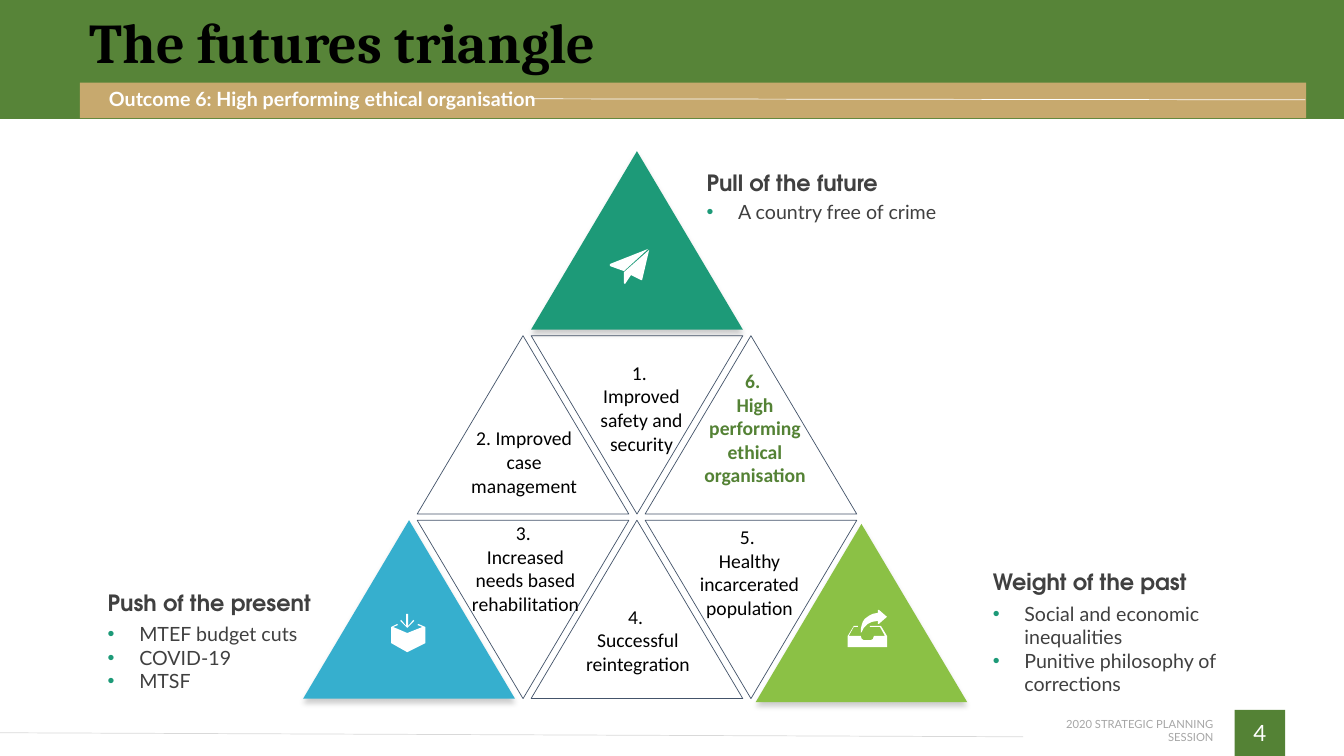
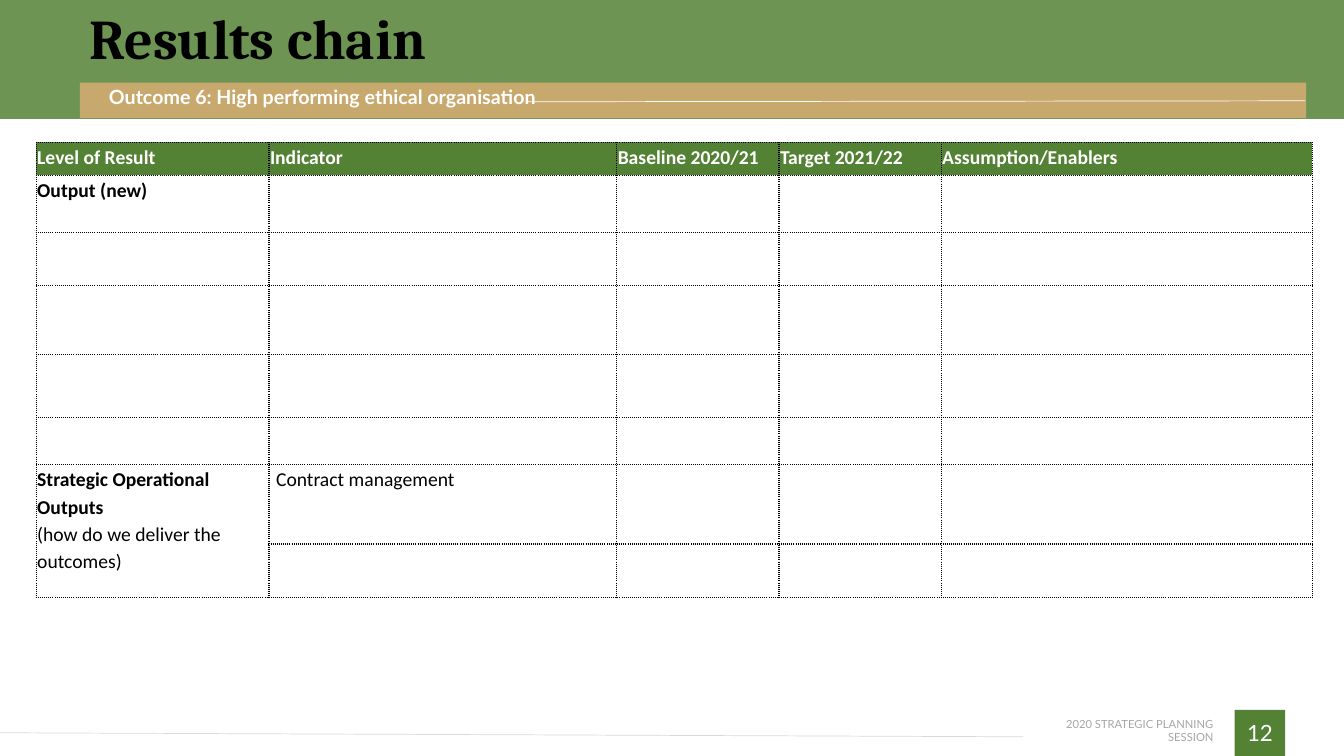
from lxml.etree import SubElement
from pptx import Presentation
from pptx.dml.color import RGBColor
from pptx.enum.shapes import MSO_CONNECTOR, MSO_SHAPE
from pptx.enum.text import MSO_ANCHOR, PP_ALIGN
from pptx.oxml.ns import qn
from pptx.util import Pt

COLORS = {
    "green": "548235", "tan": "C7A96E", "white": "FFFFFF", "black": "000000",
    "body": "404040", "footer": "A6A6A6", "rule": "D9D9D9", "outline": "44546A",
    "teal": "1D9A78", "blue": "36AFCE", "lime": "8BC145",
}
OUTCOME = "Outcome 6: High performing ethical organisation"
FOOTER = "2020 STRATEGIC PLANNING SESSION"


def rgb(name):
    return RGBColor.from_string(COLORS[name])


def add_xml(parent, tag, **attributes):
    return SubElement(parent, qn(tag), {k: str(v) for k, v in attributes.items()})


class Deck:
    """Holds the shared style and the slide being built."""

    def __init__(self):
        self.prs = Presentation()
        self.prs.slide_width, self.prs.slide_height = Pt(960), Pt(540)
        self.shapes = None

    def new_slide(self, number, title, title_box, band_opacity, outcome_top, rule):
        self.shapes = self.prs.slides.add_slide(self.prs.slide_layouts[6]).shapes
        # Footer
        page = self.shape((882, 507, 36, 33), "green")
        page.text_frame.vertical_anchor = MSO_ANCHOR.MIDDLE
        self.add_lines(page.text_frame, [number], 16, "Lato", "white", align=PP_ALIGN.CENTER)
        self.text((730.8, 517, 136.1, 9.4), [FOOTER], 8, "Lato", "footer",
                  align=PP_ALIGN.RIGHT, inset=0, anchor=MSO_ANCHOR.MIDDLE)
        self.line((730.8, 526.3), (0, 523.4), "rule")
        # Header
        self.shape((0, 0, 960, 85), "green", opacity=band_opacity)
        self.shape((57, 59, 876, 25.4), "tan")
        self.text((77.8, outcome_top, 500, 17.3), [OUTCOME], 14, "Lato", "white",
                  bold=True, inset=0, anchor=MSO_ANCHOR.MIDDLE)
        self.line(*rule, "white")
        self.text(title_box, [title], 40, "Cambria", "black", bold=True,
                  anchor=MSO_ANCHOR.MIDDLE, spacing=0.9)

    def add_lines(self, frame, lines, size, font, color, bold=False,
                  align=PP_ALIGN.LEFT, spacing=None, bulleted=False):
        for index, line in enumerate(lines):
            paragraph = frame.paragraphs[0] if index == 0 else frame.add_paragraph()
            paragraph.alignment = align
            if spacing:
                paragraph.line_spacing = spacing
            if bulleted:
                props = paragraph._p.get_or_add_pPr()
                props.set("marL", str(Pt(22.5)))
                props.set("indent", str(-Pt(22.5)))
                add_xml(add_xml(props, "a:buClr"), "a:srgbClr", val=COLORS["teal"])
                add_xml(props, "a:buFont", typeface="Arial")
                add_xml(props, "a:buChar", char="•")
            run = paragraph.add_run()
            run.text = line
            run.font.size, run.font.name, run.font.bold = Pt(size), font, bold
            run.font.color.rgb = rgb(color)

    def text(self, box, lines, size, font, color, inset=None,
             anchor=MSO_ANCHOR.TOP, **style):
        frame = self.shapes.add_textbox(*map(Pt, box)).text_frame
        frame.word_wrap = True
        frame.vertical_anchor = anchor
        if inset is not None:
            frame.margin_left = frame.margin_right = Pt(inset)
            frame.margin_top = frame.margin_bottom = Pt(inset)
        self.add_lines(frame, lines, size, font, color, **style)

    def paint(self, shape, fill=None, outline=None):
        shape.shadow.inherit = False
        if fill:
            shape.fill.solid()
            shape.fill.fore_color.rgb = rgb(fill)
        else:
            shape.fill.background()
        if outline:
            shape.line.color.rgb = rgb(outline)
            shape.line.width = Pt(0.5)
        else:
            shape.line.fill.background()
        return shape

    def shape(self, box, fill=None, outline=None, kind=MSO_SHAPE.RECTANGLE, opacity=100):
        shape = self.paint(self.shapes.add_shape(kind, *map(Pt, box)), fill, outline)
        if opacity < 100:
            color = shape._element.spPr.find(qn("a:solidFill"))[0]
            add_xml(color, "a:alpha", val=opacity * 1000)
        return shape

    def triangle(self, column, row, fill=None, inverted=False):
        box = (379.4 + column * 81.4, 108 + row * 131.8, 151.2, 127.4)
        triangle = self.shape(box, fill, None if fill else "outline",
                              MSO_SHAPE.ISOSCELES_TRIANGLE)
        if inverted:
            triangle.rotation = 180
        if fill:
            effects = triangle._element.spPr.find(qn("a:effectLst"))
            shadow = add_xml(effects, "a:outerShdw", blurRad=Pt(4), dist=Pt(3),
                             dir=5400000, algn="t", rotWithShape=0)
            color = add_xml(shadow, "a:srgbClr", val=COLORS["black"])
            add_xml(color, "a:alpha", val=20000)

    def icon(self, left, top, *outlines):
        """Draw white outlines on a grid of 0.72 pt."""
        for start, *others in outlines:
            builder = self.shapes.build_freeform(*start, scale=Pt(0.72))
            builder.add_line_segments(others, close=True)
            self.paint(builder.convert_to_shape(Pt(left), Pt(top)), "white")

    def line(self, start, end, color):
        line = self.shapes.add_connector(MSO_CONNECTOR.STRAIGHT, *map(Pt, start + end))
        line.line.color.rgb = rgb(color)
        line.line.width = Pt(0.5)
        add_xml(line._element.spPr, "a:effectLst")

    def note(self, left, top, heading, points, gap):
        self.text((left, top, 216, 19.4), [heading], 16, "TeX Gyre Adventor", "body",
                  bold=True, inset=0)
        self.text((left, top + gap, 216, 17 * len(points)), points, 14, "Lato", "body",
                  inset=0, bulleted=True)

    def table(self, left, top, widths, heights):
        table = self.shapes.add_table(len(heights), len(widths), Pt(left), Pt(top),
                                      Pt(sum(widths)), Pt(sum(heights))).table
        table.first_row = table.horz_banding = False
        for column, width in zip(table.columns, widths):
            column.width = Pt(width)
        for row, height in zip(table.rows, heights):
            row.height = Pt(height)
        for cell in table.iter_cells():
            props = cell._tc.get_or_add_tcPr()
            for side in "LRTB":
                border = add_xml(props, f"a:ln{side}", w=Pt(1))
                fill = add_xml(border, "a:solidFill")
                add_xml(fill, "a:srgbClr", val=COLORS["black"])
                add_xml(border, "a:prstDash", val="sysDot")
            cell.fill.background()
        return table

    def cell_text(self, cell, lines, color="black", inset=0.7, **style):
        cell.margin_left = cell.margin_right = Pt(inset)
        cell.margin_top = cell.margin_bottom = Pt(0)
        self.add_lines(cell.text_frame, lines, 14, "Calibri", color, spacing=1.15, **style)


def futures_triangle(deck):
    deck.new_slide("4", "The futures triangle", (57, 0, 861, 64.8), 98, 62,
                   ((379.4, 70.6), (932.4, 71.3)))
    # Notes at the three corners
    deck.note(504.7, 121, "Pull of the future", ["A country free of crime"], 21.6)
    deck.note(709.2, 406, "Weight of the past",
              ["Social and economic inequalities", "Punitive philosophy of corrections"], 23.8)
    deck.note(77, 420.5, "Push of the present",
              ["MTEF budget cuts", "COVID-19", "MTSF"], 23.8)

    # Outcome triangles, then corners; the lime corner stands slightly off the grid
    for column, row, inverted in ((0, 1, True), (1, 1, False), (-1, 1, False),
                                  (-1, 2, True), (0, 2, False), (1, 2, True)):
        deck.triangle(column, row, inverted=inverted)
    for column, row, fill in ((0, 0, "teal"), (-2, 2, "blue"), (1.97, 2.02, "lime")):
        deck.triangle(column, row, fill)

    # Icons: paper plane, tray with arrow, box with arrow
    deck.icon(435.6, 177.8,
              [(0, 15), (0, 17), (14, 22), (38, 0)],
              [(14, 23), (14, 34), (15, 35), (21, 26), (31, 31), (32, 31), (39, 1)])
    deck.icon(605.5, 435.6,
              [(39, 26), (33, 16), (22, 16), (22, 17), (32, 17), (37, 26), (26, 26),
               (25, 29), (23, 30), (16, 30), (14, 29), (13, 26), (1, 26), (6, 17),
               (10, 17), (10, 16), (6, 16), (0, 26), (0, 37), (39, 37)],
              [(13, 23), (14, 22), (16, 18), (20, 14), (24, 12), (30, 11), (30, 14),
               (31, 14), (39, 7), (31, 0), (30, 0), (30, 3), (25, 4), (21, 6),
               (17, 9), (15, 12), (14, 15), (13, 19)])
    deck.icon(279.4, 438.5,
              [(34, 13), (27, 10), (26, 11), (31, 13), (16, 19), (2, 13), (7, 11),
               (6, 10), (0, 13), (0, 29), (16, 38), (34, 29)],
              [(16, 14), (23, 7), (22, 6), (17, 12), (17, 0), (15, 0), (15, 12),
               (10, 6), (9, 7)])

    # Outcome labels
    outcomes = (
        ((419, 254.2, 78.5, 75), ["1. ", "Improved safety and security"]),
        ((328.3, 301, 92.2, 58), ["2. Improved case management"]),
        ((325.4, 368.6, 100, 75), ["3. ", "Increased needs based rehabilitation"]),
        ((403.2, 428.4, 105, 58), ["4. ", "Successful reintegration"]),
        ((481, 371.5, 108.7, 75), ["5. ", "Healthy", "incarcerated population"]),
    )
    for box, lines in outcomes:
        deck.text(box, lines, 14, "Calibri", "black", align=PP_ALIGN.CENTER)
    deck.text((491.8, 260, 95, 92), ["6. ", "High performing ethical organisation"],
              14, "Calibri", "green", bold=True, align=PP_ALIGN.CENTER)


def results_chain(deck):
    deck.new_slide("12", "Results chain", (57, 8.6, 848, 42.5), 85, 60.5,
                   ((376.6, 72.7), (932.4, 72)))
    results = deck.table(25.9, 101.5, (166.3, 248.4, 115.9, 115.9, 265),
                         (23.8, 41, 37.4, 49.7, 44.6, 33.8, 56.9, 38.2))
    # Column headings
    headings = ("Level of Result", "Indicator", "Baseline 2020/21", "Target 2021/22",
                "Assumption/Enablers")
    for column, heading in enumerate(headings):
        cell = results.cell(0, column)
        cell.fill.solid()
        cell.fill.fore_color.rgb = rgb("green")
        deck.cell_text(cell, [heading], "white", bold=True, align=PP_ALIGN.JUSTIFY)
    # Levels of result
    deck.cell_text(results.cell(1, 0), ["Output (new)"], bold=True, align=PP_ALIGN.JUSTIFY)
    operational = results.cell(6, 0)
    operational.merge(results.cell(7, 0))
    deck.cell_text(operational, ["Strategic Operational Outputs",
                                 "(how do we deliver the outcomes)"])
    operational.text_frame.paragraphs[0].runs[0].font.bold = True
    deck.cell_text(results.cell(6, 1), ["Contract management"], inset=5)


def main():
    deck = Deck()
    futures_triangle(deck)
    results_chain(deck)
    deck.prs.save("out.pptx")


if __name__ == "__main__":
    main()
